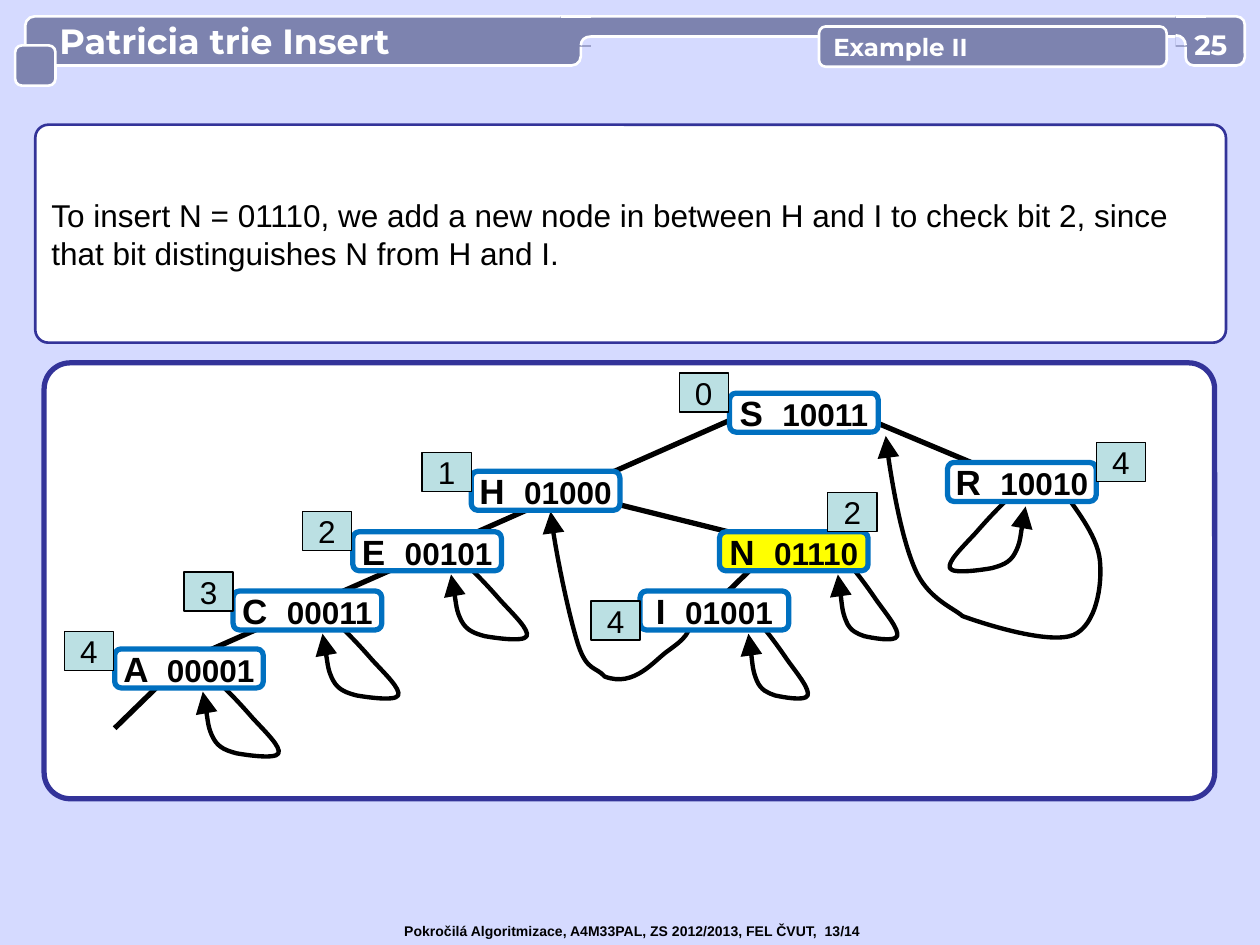
import copy
from dataclasses import dataclass

from lxml import etree
from pptx import Presentation
from pptx import util as u
from pptx.dml import color
from pptx.enum import shapes, text
from pptx.oxml import ns

Point = tuple[float, float]
Span = tuple[str, dict]

LAVENDER, SLATE, WHITE, BLACK = "D5DAFF", "7D83AF", "FFFFFF", "000000"
NAVY, BLUE, YELLOW, TEAL = "333399", "0070C0", "FFFF00", "BBE0E3"
NODE_WIDTH, NODE_HEIGHT = 1.18, 0.31
CURVE_STEPS = 12
LOOP = [(0, 0), (0.26, 0.12), (0.5, 0.28), (0.66, 0.39), (0.83, 0.5), (1.04, 0.62),
        (1, 0.67), (0.96, 0.72), (0.55, 0.68), (0.45, 0.67), (0.33, 0.65),
        (0.21, 0.63), (0.14, 0.55), (0.07, 0.47), (0.05, 0.33), (0, 0.18)]


@dataclass
class Node:
    letter: str
    bits: str
    left: float
    top: float
    level: str
    badge_dx: float = -0.39
    badge_dy: float = -0.15
    fill: str = WHITE


@dataclass
class Panel:
    left: float
    top: float
    width: float
    height: float
    radius: float | None = None
    fill: str = SLATE
    line: str | None = WHITE
    weight: float = 1.5


NODES = [
    Node("A", "00001", 0.91, 5.15, "4", -0.4, -0.14),
    Node("C", "00011", 1.85, 4.69, "3"),
    Node("S", "10011", 5.79, 3.12, "0", -0.4, -0.16),
    Node("E", "00101", 2.8, 4.22, "2", -0.4, -0.16),
    Node("R", "10010", 7.52, 3.67, "4", NODE_WIDTH, -0.16),
    Node("I", "01001", 5.08, 4.69, "4", -0.39, 0.08),
    Node("H", "01000", 3.74, 3.74, "1"),
    Node("N", "01110", 5.71, 4.22, "2", 0.86, -0.31, YELLOW),
]
BRANCHES = [((5.71, 4.76), (6.1, 4.38)), ((6.73, 3.26), (8.23, 3.89)),
            ((1.46, 5.25), (6.1, 3.2)), ((0.91, 5.78), (1.3, 5.4)),
            ((4.53, 3.91), (6.1, 4.3))]
SELF_LOOPS = [(6.65, 4.38, 0.47), (8.14, 3.84, -0.6), (3.58, 4.38, 0.6),
              (2.56, 4.85, 0.6), (1.61, 5.31, 0.6), (5.94, 4.85, 0.47)]
BACK_LINKS = [
    [(8.39, 3.83), (8.52, 4.02), (8.71, 4.24), (8.73, 4.45), (8.75, 4.65),
     (8.7, 4.96), (8.52, 5.04), (8.34, 5.11), (7.89, 4.98), (7.64, 4.89),
     (7.56, 4.82), (7.36, 4.75), (7.26, 4.51), (7.16, 4.28), (7.05, 3.69), (7.03, 3.46)],
    [(5.51, 4.84), (5.48, 5.04), (5.43, 5.07), (5.31, 5.16), (5.19, 5.24),
     (5.04, 5.46), (4.8, 5.37), (4.73, 5.29), (4.66, 5.33), (4.59, 5.12),
     (4.52, 4.9), (4.39, 4.29), (4.37, 4.06)],
]

deck = Presentation()
deck.slide_width, deck.slide_height = u.Inches(10), u.Inches(7.5)
page = deck.slides.add_slide(deck.slide_layouts[6])


def paint(target, value: str) -> None:
    target.solid()
    target.fore_color.rgb = color.RGBColor.from_string(value)


def style(shape, fill: str | None, line: str | None, weight: float = 1.5) -> None:
    shape.shadow.inherit = False
    for target, value in ((shape.fill, fill), (shape.line.fill, line)):
        if value:
            paint(target, value)
        else:
            target.background()
    if line:
        shape.line.width = u.Pt(weight)


def font(size: float, value: str = BLACK, bold: bool = False, name: str = "Arial") -> dict:
    return {"size": u.Pt(size), "bold": bold, "name": name, "color": value}


def write(box, spans: list[Span], centred: bool = False, inset: float | None = None,
          **frame_format) -> None:
    frame = box.text_frame
    settings = {"word_wrap": True, "vertical_anchor": text.MSO_ANCHOR.MIDDLE}
    if inset is not None:
        settings |= {f"margin_{side}": u.Inches(inset)
                     for side in ("left", "right", "top", "bottom")}
    for key, value in (settings | frame_format).items():
        setattr(frame, key, value)
    para = frame.paragraphs[0]
    para.alignment = text.PP_ALIGN.CENTER if centred else text.PP_ALIGN.LEFT
    for words, font_format in spans:
        span = para.add_run()
        span.text = words
        for key, value in font_format.items():
            if key == "color":
                paint(span.font.fill, value)
            else:
                setattr(span.font, key, value)


def add_panel(panel: Panel, rounded: bool = True, canvas=page):
    kind = shapes.MSO_SHAPE.ROUNDED_RECTANGLE if rounded else shapes.MSO_SHAPE.RECTANGLE
    box = canvas.shapes.add_shape(kind, u.Inches(panel.left), u.Inches(panel.top),
                                  u.Inches(panel.width), u.Inches(panel.height))
    if panel.radius is not None:
        box.adjustments[0] = panel.radius
    style(box, panel.fill, panel.line, panel.weight)
    return box


def add_line(start: Point, end: Point, value: str, weight: float, canvas=page) -> None:
    line = canvas.shapes.add_connector(shapes.MSO_CONNECTOR.STRAIGHT,
                                       *(u.Inches(length) for length in start + end))
    paint(line.line.fill, value)
    line.line.width = u.Pt(weight)
    etree.SubElement(line._element.spPr, ns.qn("a:effectLst"))


def flatten(controls: list[Point]) -> list[Point]:
    points = [controls[0]]
    for first in range(0, len(controls) - 1, 3):
        segment = controls[first:first + 4]
        for step in range(1, CURVE_STEPS + 1):
            t = step / CURVE_STEPS
            weights = ((1 - t) ** 3, 3 * t * (1 - t) ** 2, 3 * t * t * (1 - t), t ** 3)
            points.append(tuple(sum(w * point[axis] for w, point in zip(weights, segment))
                                for axis in (0, 1)))
    return points


def add_curve(controls: list[Point], canvas=page):
    places = [(u.Inches(x), u.Inches(y)) for x, y in flatten(controls)]
    builder = canvas.shapes.build_freeform(*places[0])
    builder.add_line_segments(places[1:], close=False)
    curve = builder.convert_to_shape()
    outline = curve._element.xpath(".//a:path")[0]
    for piece in list(outline):
        outline.remove(piece)
    left, top = (min(place[axis] for place in places) for axis in (0, 1))
    add_step(outline, "moveTo", controls[:1], left, top)
    for first in range(1, len(controls), 3):
        add_step(outline, "cubicBezTo", controls[first:first + 3], left, top)
    return curve, outline


def add_step(outline, kind: str, points: list[Point], left: int, top: int) -> None:
    step = etree.SubElement(outline, ns.qn(f"a:{kind}"))
    for x, y in points:
        etree.SubElement(step, ns.qn("a:pt"), x=str(u.Inches(x) - left),
                         y=str(u.Inches(y) - top))


def add_arrow(controls: list[Point]) -> None:
    arrow, _ = add_curve(controls)
    style(arrow, None, BLACK, 2.5)
    etree.SubElement(arrow.line._get_or_add_ln(), ns.qn("a:tailEnd"),
                     type="triangle", w="lg", len="lg")


def add_joint(left: float, arc: list[Point], corner: Point) -> None:
    joint = page.shapes.add_group_shape()
    add_panel(Panel(left, 0.13, 0.24, 0.24, line=None), rounded=False, canvas=joint)
    add_line((left, 0.13), (left + 0.24, 0.13), WHITE, 1.5, joint)
    fillet, edge = add_curve(arc, joint)
    area = copy.deepcopy(edge)
    edge.set("fill", "none")
    area.set("stroke", "0")
    add_step(area, "lnTo", [corner], u.Inches(min(x for x, _ in arc)), u.Inches(arc[0][1]))
    etree.SubElement(area, ns.qn("a:close"))
    edge.addnext(area)
    style(fillet, LAVENDER, WHITE)


def add_node(node: Node) -> None:
    box = add_panel(Panel(node.left, node.top, NODE_WIDTH, NODE_HEIGHT,
                          fill=node.fill, line=BLUE, weight=3))
    write(box, [(f"{node.letter}  ", font(20, bold=True)),
                (node.bits, font(18, bold=True))], centred=True, inset=0)


def add_badge(node: Node) -> None:
    box = add_panel(Panel(node.left + node.badge_dx, node.top + node.badge_dy, 0.39, 0.31,
                          fill=TEAL, line=BLACK, weight=0.75), rounded=False)
    write(box, [(node.level, font(18))], centred=True, inset=0)


def add_label(left: float, top: float, width: float, height: float):
    return page.shapes.add_textbox(*(u.Inches(n) for n in (left, top, width, height)))


def heading(size: float) -> dict:
    return font(size, WHITE, True, "Montserrat")


def main() -> None:
    paint(page.background.fill, LAVENDER)
    add_panel(Panel(0.35, 2.88, 9.29, 3.46, 0.06, WHITE, NAVY, 3))
    for start, end in BRANCHES:
        add_line(start, end, BLACK, 3)
    loops = [[(left + x * width, top + y) for x, y in LOOP] for left, top, width in SELF_LOOPS]
    for controls in loops + BACK_LINKS:
        add_arrow(controls)
    for node in NODES:
        add_node(node)
    message = add_panel(Panel(0.28, 0.99, 9.45, 1.73, 0.06, WHITE, NAVY))
    write(message, [("To insert N = 01110, we add a new node in between H and I to check "
                     "bit 2, since that bit distinguishes N from H and I.", font(18))])
    title = add_panel(Panel(0.2, 0.13, 4.41, 0.39, 0.19))
    write(title, [("Patricia trie Insert", heading(20))], margin_left=u.Inches(0.25))
    add_panel(Panel(4.61, 0.13, 4.88, 0.16, 0.5))
    add_joint(4.45, [(4.69, 0.29), (4.64, 0.29), (4.61, 0.32), (4.61, 0.36)], (4.69, 0.36))
    for left, top, width, height in ((0.12, 0.36, 0.32, 0.32), (9.41, 0.13, 0.47, 0.39)):
        add_panel(Panel(left, top, width, height, 0.17))
    add_joint(9.33, [(9.33, 0.28), (9.38, 0.28), (9.41, 0.32), (9.41, 0.36)], (9.33, 0.36))
    subtitle = add_panel(Panel(6.5, 0.21, 2.76, 0.32, 0.17))
    write(subtitle, [("Example II", heading(14))])
    write(add_label(9.41, 0.22, 0.4, 0.27), [("25", heading(16))], centred=True, inset=0)
    write(add_label(3.11, 7.27, 3.9, 0.24),
          [("Pokročilá Algoritmizace, A4M33PAL, ZS 2012/2013, FEL ČVUT,  13/14",
            font(8, bold=True))], vertical_anchor=text.MSO_ANCHOR.TOP)
    for node in NODES:
        add_badge(node)
    deck.save("out.pptx")


if __name__ == "__main__":
    main()
